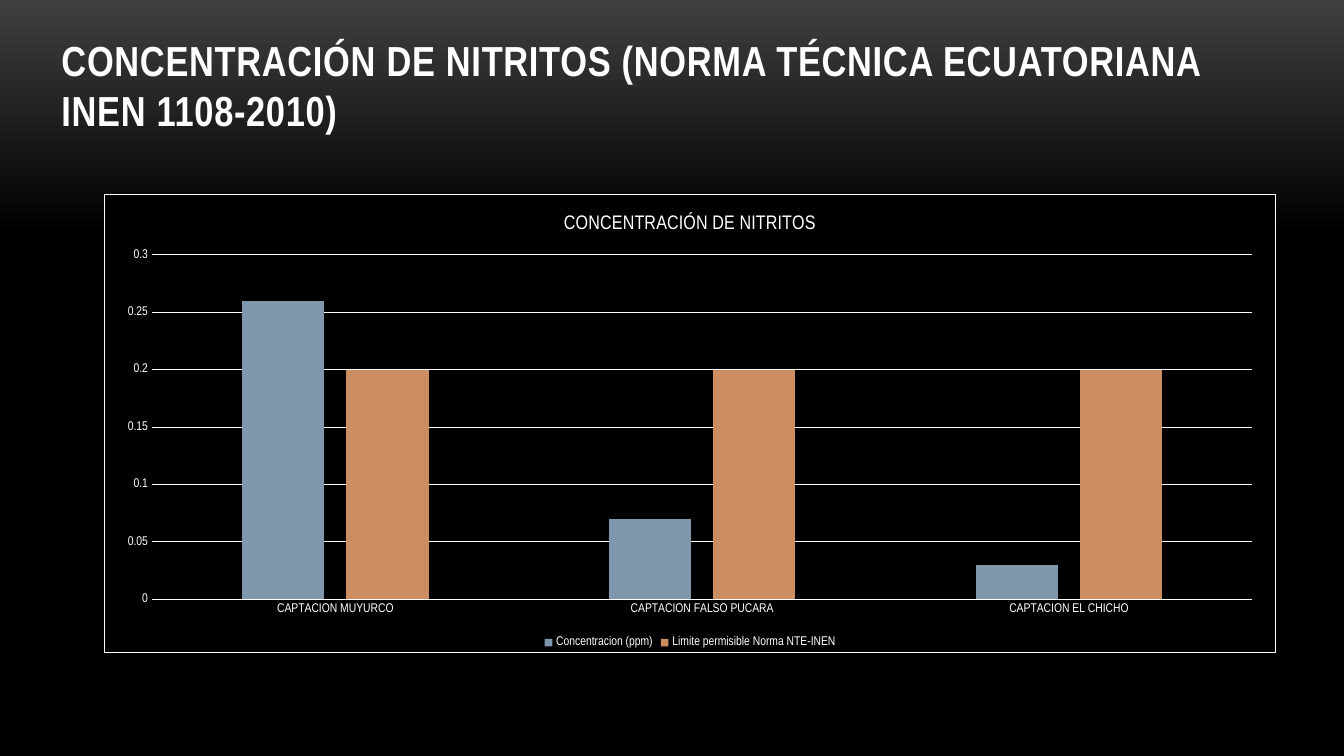
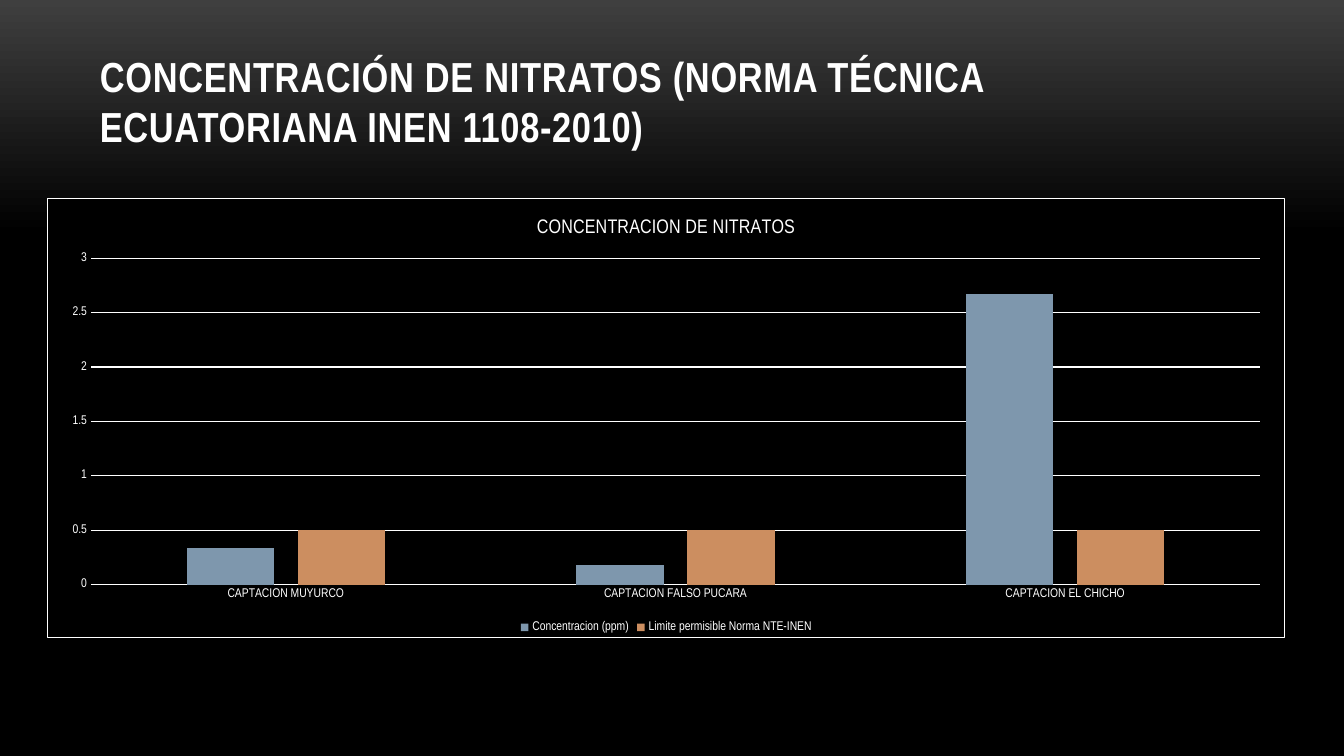
from copy import deepcopy
from lxml import etree
from pptx import Presentation
from pptx.chart.data import CategoryChartData
from pptx.dml.color import RGBColor
from pptx.enum.chart import XL_CHART_TYPE as ChartType, XL_LEGEND_POSITION as LegendPosition
from pptx.enum.chart import XL_TICK_MARK as TickMark
from pptx.enum.text import MSO_ANCHOR, MSO_AUTO_SIZE, PP_ALIGN
from pptx.oxml.ns import qn
from pptx.util import Pt

# Content; boxes are left, top, width, height in points
SITES = ["CAPTACION MUYURCO", "CAPTACION FALSO PUCARA", "CAPTACION EL CHICHO"]
MEASURED, LIMIT = "Concentracion (ppm)", "Limite permisible Norma NTE-INEN"
SLIDES = [
    dict(heading="CONCENTRACIÓN DE NITRITOS (NORMA TÉCNICA ECUATORIANA INEN 1108-2010)",
         heading_box=(36.7, 23.8, 832.3, 76.3), right_inset=7.2,
         chart_title="CONCENTRACIÓN DE NITRITOS", chart_box=(74.2, 138.5, 837.4, 328.3),
         measured=(0.26, 0.07, 0.03), limit=0.2, top=0.3, step=0.05),
    dict(heading="CONCENTRACIÓN DE NITRATOS (NORMA TÉCNICA ECUATORIANA INEN 1108-2010)",
         heading_box=(64.1, 21.6, 832.3, 90), right_inset=36,
         chart_title="CONCENTRACION DE NITRATOS", chart_box=(33.8, 141.4, 884.2, 314.6),
         measured=(0.34, 0.18, 2.67), limit=0.5, top=3, step=0.5),
]

# Shared style
FONT = "Arial Narrow"
WHITE, BLACK, GREY = "FFFFFF", "000000", "3F3F3F"
SERIES_COLORS = ("7E97AD", "CC8E60")
RULE_WIDTH = 0.75


def color(value):
    return RGBColor.from_string(value)


def style_font(font, size, bold=False):
    font.name, font.size, font.bold = FONT, Pt(size), bold
    font.color.rgb = color(WHITE)


def style_rule(line):
    line.color.rgb = color(WHITE)
    line.width = Pt(RULE_WIDTH)


def set_background(master):
    fill = master.background.fill
    fill.gradient()
    fill.gradient_angle = 270
    for stop, (position, shade) in zip(fill.gradient_stops, ((0, GREY), (0.31, BLACK))):
        stop.position = position
        stop.color.rgb = color(shade)
    # Third stop keeps the rest of the slide black
    stops = master.element.find(".//" + qn("a:gsLst"))
    last_stop = deepcopy(stops[-1])
    last_stop.set("pos", "100000")
    stops.append(last_stop)


def add_heading(slide, text, box, right_inset):
    heading = slide.shapes.title
    heading.left, heading.top, heading.width, heading.height = map(Pt, box)
    frame = heading.text_frame
    frame.text = text
    frame.word_wrap = True
    frame.auto_size = MSO_AUTO_SIZE.NONE
    frame.vertical_anchor = MSO_ANCHOR.BOTTOM
    frame.margin_right = Pt(right_inset)
    paragraph = frame.paragraphs[0]
    paragraph.alignment = PP_ALIGN.LEFT
    run = paragraph.runs[0]
    style_font(run.font, 30, bold=True)
    run.font._element.set("spc", "50")


def frame_chart(chart):
    """Black chart area with a thin white border."""
    area = etree.fromstring(
        f'<c:spPr xmlns:c="http://schemas.openxmlformats.org/drawingml/2006/chart"'
        f' xmlns:a="http://schemas.openxmlformats.org/drawingml/2006/main">'
        f'<a:solidFill><a:srgbClr val="{BLACK}"/></a:solidFill>'
        f'<a:ln w="{Pt(RULE_WIDTH)}"><a:solidFill><a:srgbClr val="{WHITE}"/></a:solidFill></a:ln>'
        f'</c:spPr>')
    chart.element.find(qn("c:chart")).addnext(area)


def add_concentrations(slide, content):
    data = CategoryChartData()
    data.categories = SITES
    data.add_series(MEASURED, content["measured"])
    data.add_series(LIMIT, [content["limit"]] * len(SITES))
    chart = slide.shapes.add_chart(
        ChartType.COLUMN_CLUSTERED, *map(Pt, content["chart_box"]), data).chart
    style_font(chart.font, 10)
    frame_chart(chart)

    # Title and legend
    chart.has_title = True
    title = chart.chart_title
    title.include_in_layout = False
    title.text_frame.text = content["chart_title"]
    style_font(title.text_frame.paragraphs[0].runs[0].font, 14)
    chart.has_legend = True
    chart.legend.position = LegendPosition.BOTTOM
    chart.legend.include_in_layout = False
    style_font(chart.legend.font, 9)

    # Columns
    plot = chart.plots[0]
    plot.gap_width, plot.overlap, plot.vary_by_categories = 219, -27, False
    for series, shade in zip(plot.series, SERIES_COLORS):
        series.format.fill.solid()
        series.format.fill.fore_color.rgb = color(shade)

    # Axes
    sites, scale = chart.category_axis, chart.value_axis
    for axis in (sites, scale):
        axis.major_tick_mark = axis.minor_tick_mark = TickMark.NONE
        style_font(axis.tick_labels.font, 9)
    style_rule(sites.format.line)
    scale.format.line.fill.background()
    scale.has_major_gridlines = True
    style_rule(scale.major_gridlines.format.line)
    scale.minimum_scale, scale.maximum_scale = 0, content["top"]
    scale.major_unit = content["step"]


def main():
    prs = Presentation()
    prs.slide_width, prs.slide_height = Pt(960), Pt(540)
    set_background(prs.slide_master)
    title_only = prs.slide_layouts[5]
    for content in SLIDES:
        slide = prs.slides.add_slide(title_only)
        add_heading(slide, content["heading"], content["heading_box"], content["right_inset"])
        add_concentrations(slide, content)
    prs.save("out.pptx")


if __name__ == "__main__":
    main()
